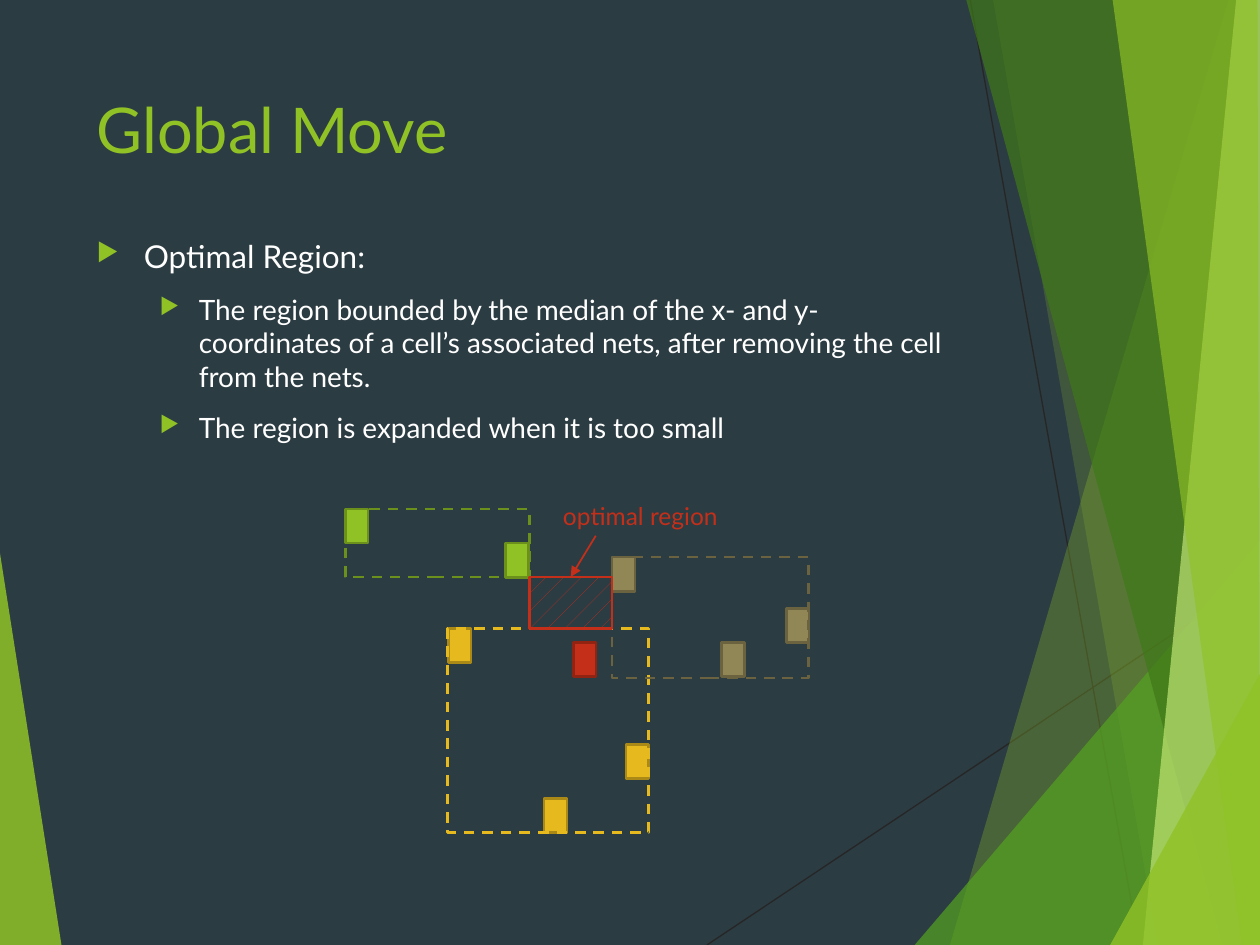
"""Build the Global Move slide, which shows the optimal region of a cell."""
from lxml import etree
from pptx import Presentation
from pptx.dml.color import RGBColor
from pptx.enum.dml import MSO_LINE, MSO_PATTERN
from pptx.enum.shapes import MSO_CONNECTOR, MSO_SHAPE
from pptx.oxml.ns import qn
from pptx.util import Cm, Pt

RECTANGLE = MSO_SHAPE.RECTANGLE
STRAIGHT = MSO_CONNECTOR.STRAIGHT
DASH = MSO_LINE.DASH
DOTS = MSO_PATTERN.PERCENT_5

SLATE = RGBColor(0x2C, 0x3C, 0x43)
CHARCOAL = RGBColor(0x26, 0x26, 0x26)
WHITE = RGBColor(0xFF, 0xFF, 0xFF)
LIME = RGBColor(0x90, 0xC2, 0x26)
DARK_LIME = RGBColor(0x6B, 0x90, 0x1C)
GREEN = RGBColor(0x54, 0xA0, 0x21)
FOREST = RGBColor(0x3F, 0x78, 0x19)
PALE_LIME = RGBColor(0xC0, 0xE4, 0x74)
RED = RGBColor(0xC4, 0x2F, 0x1A)
DARK_RED = RGBColor(0x91, 0x23, 0x13)
GOLD = RGBColor(0xE6, 0xB9, 0x1E)
DARK_GOLD = RGBColor(0xAA, 0x89, 0x16)
KHAKI = RGBColor(0x91, 0x86, 0x55)
DARK_KHAKI = RGBColor(0x6B, 0x63, 0x3F)

FONT = "Lato"
WIDTH, HEIGHT = 25.4, 19.05
CELL_SIZE = (0.46, 0.69)

TITLE = "Global Move"
BULLETS = [
    (0, "Optimal Region:"),
    (1, "The region bounded by the median of the x- and y-coordinates of a "
        "cell’s associated nets, after removing the cell from the nets."),
    (1, "The region is expanded when it is too small"),
]
LEVELS = [(18, 0.95, 0.95), (16, 2.06, 0.79)]
LABEL = "optimal region"

RAYS = [(14.25, HEIGHT, WIDTH, 11.61), (19.56, 0, 22.96, HEIGHT)]
BOTTOM_RIGHT, TOP_RIGHT = (WIDTH, HEIGHT), (WIDTH, 0)
FACETS = [
    (LIME, 85, [(0, 11.15), (1.24, HEIGHT), (0, HEIGHT)]),
    (LIME, 30, [(24.77, 0), (19.15, HEIGHT), BOTTOM_RIGHT, TOP_RIGHT]),
    (LIME, 20, [(20.02, 0), (23.34, HEIGHT), BOTTOM_RIGHT, TOP_RIGHT]),
    (GREEN, 72, [(18.44, HEIGHT), (WIDTH, 10.9), BOTTOM_RIGHT]),
    (FOREST, 70, [(19.48, 0), (24.64, HEIGHT), BOTTOM_RIGHT, TOP_RIGHT]),
    (PALE_LIME, 70, [(24.92, 0), (23.04, HEIGHT), BOTTOM_RIGHT, TOP_RIGHT]),
    (LIME, 65, [(22.43, 0), (25.04, HEIGHT), BOTTOM_RIGHT, (25.35, 0)]),
    (LIME, 80, [(22.38, HEIGHT), (WIDTH, 13.59), BOTTOM_RIGHT]),
]

GREEN_NET = (6.96, 10.26, 3.71, 1.37)
GOLD_NET = (9.02, 12.67, 4.06, 4.11)
KHAKI_NET = (12.34, 11.23, 3.96, 2.44)
NETS = [
    (GREEN_NET, LIME, DARK_LIME, DARK_LIME, [(6.96, 10.26), (10.19, 10.95)]),
    (GOLD_NET, GOLD, DARK_GOLD, GOLD,
     [(9.04, 12.67), (10.97, 16.1), (12.62, 15.01)]),
    (KHAKI_NET, KHAKI, DARK_KHAKI, DARK_KHAKI,
     [(12.34, 11.23), (14.55, 12.95), (15.85, 12.27)]),
]
MOVED_CELL = (11.56, 12.95)


def lengths(values):
    return [Cm(value) for value in values]


def add_facet(page, color, opacity, points):
    corners = [lengths(point) for point in points]
    builder = page.shapes.build_freeform(*corners[0])
    builder.add_line_segments(corners[1:])
    facet = builder.convert_to_shape()
    facet.shadow.inherit = False
    facet.fill.solid()
    facet.fill.fore_color.rgb = color
    facet.line.fill.background()
    tint = facet.fill._xPr.find(".//" + qn("a:srgbClr"))
    etree.SubElement(tint, qn("a:alpha"), val=str(opacity * 1000))


def add_line(page, ends, color, width):
    line = page.shapes.add_connector(STRAIGHT, *lengths(ends))
    line.line.color.rgb = color
    line.line.width = Pt(width)
    etree.SubElement(line._element.spPr, qn("a:effectLst"))
    return line


def add_rectangle(page, place, outline, fill=None):
    shape = page.shapes.add_shape(RECTANGLE, *lengths(place))
    shape.shadow.inherit = False
    shape.line.color.rgb = outline
    shape.line.width = Pt(1.5)
    if fill is None:
        shape.fill.background()
    else:
        shape.fill.solid()
        shape.fill.fore_color.rgb = fill
    return shape


def style(paragraph, text, size, color):
    paragraph.text = text
    paragraph.font.name = FONT
    paragraph.font.size = Pt(size)
    paragraph.font.color.rgb = color


def add_text(page, place, wrap=True):
    box = page.shapes.add_textbox(*lengths(place))
    box.text_frame.word_wrap = wrap
    return box.text_frame


def add_bullet(paragraph, margin, hanging):
    properties = paragraph._p.get_or_add_pPr()
    properties.set("marL", str(Cm(margin)))
    properties.set("indent", str(-Cm(hanging)))
    color = etree.Element(qn("a:buClr"))
    etree.SubElement(color, qn("a:srgbClr"), val=str(LIME))
    size = etree.Element(qn("a:buSzPct"), val="80000")
    mark = etree.Element(qn("a:buChar"), char="▶")
    defaults = properties.find(qn("a:defRPr"))
    for part in (color, size, mark):
        defaults.addprevious(part)


def add_diagram(page):
    for place, fill, edge, outline, cells in NETS:
        for cell in cells:
            add_rectangle(page, cell + CELL_SIZE, edge, fill)
        add_rectangle(page, place, outline).line.dash_style = DASH
    add_rectangle(page, MOVED_CELL + CELL_SIZE, DARK_RED, RED)

    left, top = GREEN_NET[0] + GREEN_NET[2], GREEN_NET[1] + GREEN_NET[3]
    width, height = KHAKI_NET[0] - left, GOLD_NET[1] - top
    region = add_rectangle(page, (left, top, width, height), RED)
    region.fill.patterned()
    region.fill.pattern = DOTS
    region.fill.fore_color.rgb = RED
    region.fill.back_color.rgb = SLATE

    label = add_text(page, (11.1, 9.98, 3.76, 0.86), wrap=False)
    style(label.paragraphs[0], LABEL, 14, RED)
    arrow = add_line(page, (12.01, 10.8, left + width / 2, top), RED, 1)
    arrow.end_connect(region, 0)
    etree.SubElement(arrow.line._get_or_add_ln(), qn("a:tailEnd"), type="triangle")


def main():
    deck = Presentation()
    deck.slide_width, deck.slide_height = Cm(WIDTH), Cm(HEIGHT)
    page = deck.slides.add_slide(deck.slide_layouts[6])
    page.background.fill.solid()
    page.background.fill.fore_color.rgb = SLATE

    for ends in RAYS:
        add_line(page, ends, CHARCOAL, 0.75)
    for facet in FACETS:
        add_facet(page, *facet)

    title = add_text(page, (1.7, 1.7, 17.63, 3.66))
    style(title.paragraphs[0], TITLE, 36, LIME)
    body = add_text(page, (1.7, 4.65, 17.63, 12.12))
    for index, (level, text) in enumerate(BULLETS):
        paragraph = body.add_paragraph() if index else body.paragraphs[0]
        size, margin, hanging = LEVELS[level]
        style(paragraph, text, size, WHITE)
        paragraph.level = level
        paragraph.space_before = Pt(10)
        add_bullet(paragraph, margin, hanging)

    add_diagram(page)
    deck.save("out.pptx")


if __name__ == "__main__":
    main()
